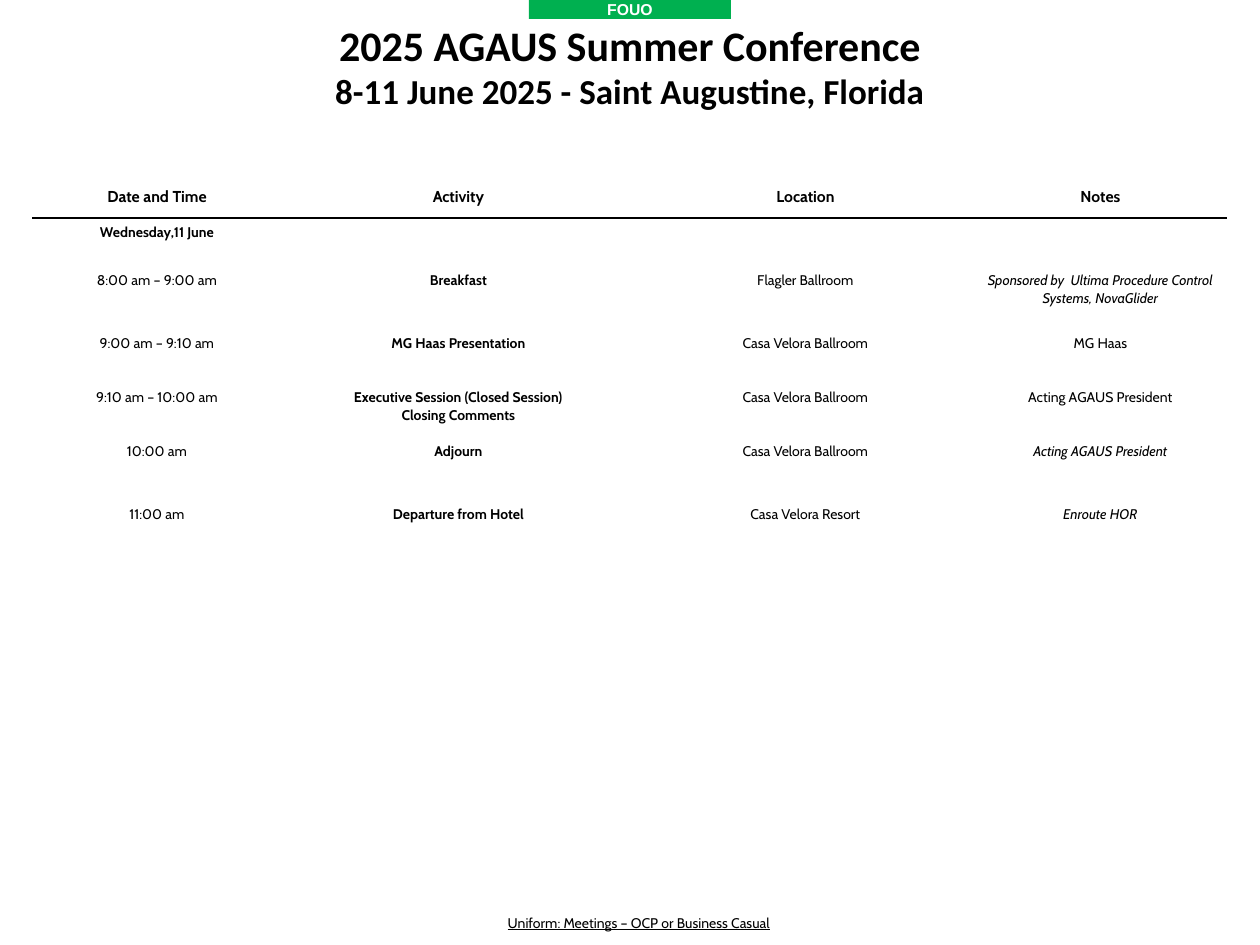
import pptx
import pptx.dml.color
import pptx.enum.shapes
import pptx.enum.text
import pptx.oxml
import pptx.oxml.ns
import pptx.util

PX = 914400 / 126
BLACK, WHITE, GREEN = "000000", "FFFFFF", "00B050"
COLUMNS = [248, 355, 339, 251]
ROWS = [37, 48, 63, 54, 54, 63, 63]
AGENDA = [
    ["Date and Time", "Activity", "Location", "Notes"],
    ["Wednesday,11 June", "", "", ""],
    ["8:00 am – 9:00 am", "Breakfast", "Flagler Ballroom",
     "Sponsored by  Ultima Procedure Control Systems, NovaGlider"],
    ["9:00 am – 9:10 am", "MG Haas Presentation", "Casa Velora Ballroom", "MG Haas"],
    ["9:10 am – 10:00 am", "Executive Session (Closed Session)\nClosing Comments",
     "Casa Velora Ballroom", "Acting AGAUS President"],
    ["10:00 am", "Adjourn", "Casa Velora Ballroom", "Acting AGAUS President"],
    ["11:00 am", "Departure from Hotel", "Casa Velora Resort", "Enroute HOR"],
]
ITALIC_NOTES = {2, 5, 6}


def px(n):
    return pptx.util.Emu(round(n * PX))


def rgb(value):
    return pptx.dml.color.RGBColor.from_string(value)


def write(p, text, font, size, color=BLACK, bold=False, italic=False, underline=False):
    """Fill a centred paragraph and format its runs."""
    p.text = text
    p.alignment = pptx.enum.text.PP_ALIGN.CENTER
    for r in p.runs:
        f = r.font
        f.name, f.size, f.color.rgb = font, pptx.util.Pt(size), rgb(color)
        f.bold, f.italic, f.underline = bold, italic, underline
    if not text:
        # An empty cell takes its line height from the end mark
        p._p.get_or_add_endParaRPr().set("sz", str(size * 100))


def add_marking(s, x, y, w, h):
    sp = s.shapes.add_shape(pptx.enum.shapes.MSO_SHAPE.RECTANGLE, px(x), px(y), px(w), px(h))
    sp.shadow.inherit = False
    sp.fill.solid()
    sp.fill.fore_color.rgb = rgb(GREEN)
    sp.line.fill.background()
    tf = sp.text_frame
    tf.margin_left = tf.margin_right = tf.margin_top = tf.margin_bottom = 0
    write(tf.paragraphs[0], "FOUO", "Arial", 9, WHITE, bold=True)


def add_text(s, x, y, w, h):
    tf = s.shapes.add_textbox(px(x), px(y), px(w), px(h)).text_frame
    tf.word_wrap = True
    return tf


def add_title(s, x, y, w, h):
    tf = add_text(s, x, y, w, h)
    write(tf.paragraphs[0], "2025 AGAUS Summer Conference", "Calibri", 24, bold=True)
    write(tf.add_paragraph(), "8-11 June 2025 - Saint Augustine, Florida", "Calibri", 20, bold=True)


def add_uniform(s, x, y, w, h):
    tf = add_text(s, x, y, w, h)
    write(tf.paragraphs[0], "Uniform: Meetings – OCP or Business Casual", "Cabin", 8, underline=True)


def add_border(cell, side):
    ln = pptx.oxml.parse_xml(
        f'<a:{side} {pptx.oxml.ns.nsdecls("a")} w="12700"><a:solidFill>'
        f'<a:srgbClr val="{BLACK}"/></a:solidFill></a:{side}>')
    cell._tc.get_or_add_tcPr().insert(0, ln)


def add_agenda(s, x, y):
    table = s.shapes.add_table(len(ROWS), len(COLUMNS), px(x), px(y),
                               px(sum(COLUMNS)), px(sum(ROWS))).table
    table.first_row = table.horz_banding = False
    for column, w in zip(table.columns, COLUMNS):
        column.width = px(w)
    for i, (row, h) in enumerate(zip(table.rows, ROWS)):
        row.height = px(h)
        for j, cell in enumerate(row.cells):
            cell.fill.solid()
            cell.fill.fore_color.rgb = rgb(WHITE)
            write(cell.text_frame.paragraphs[0], AGENDA[i][j], "Cabin", 9 if i == 0 else 8,
                  bold=i < 2 or j == 1, italic=j == 3 and i in ITALIC_NOTES)
            if i < 2:
                add_border(cell, "lnT" if i else "lnB")


def main():
    prs = pptx.Presentation()
    prs.slide_width, prs.slide_height = px(1260), px(945)
    s = prs.slides.add_slide(prs.slide_layouts[6])
    add_marking(s, 529, 0, 202, 19)
    add_agenda(s, 33, 181)
    add_title(s, 0, 13, 1260, 106)
    add_uniform(s, 307, 908, 664, 30)
    prs.save("out.pptx")


if __name__ == "__main__":
    main()
